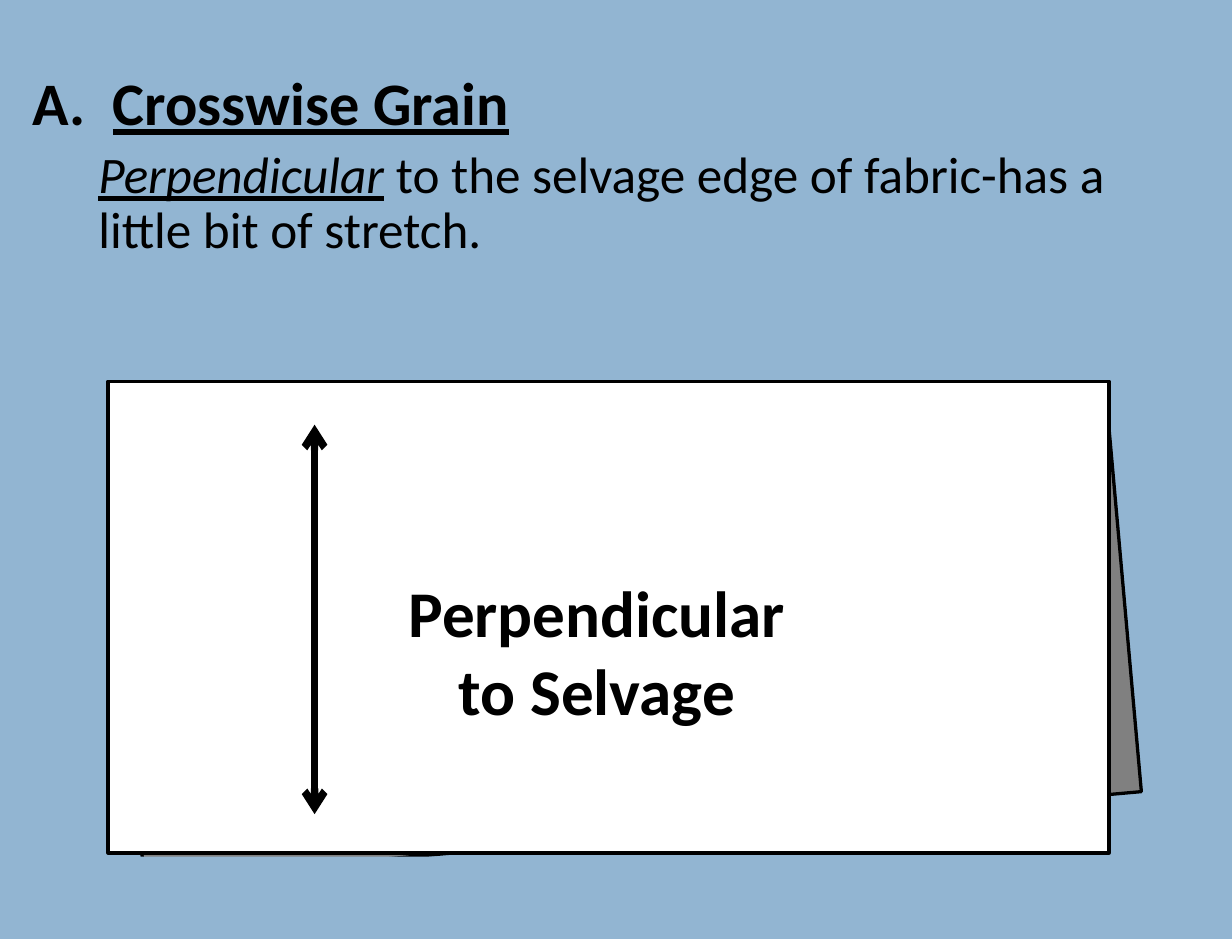
from lxml import etree
from pptx import Presentation
from pptx.dml.color import RGBColor
from pptx.enum import shapes as es, text as et
from pptx.oxml.ns import qn
from pptx.util import Cm, Pt

SKY, GREY, WHITE, BLACK = "92B5D2", "808080", "FFFFFF", "000000"


def paint(color, hue):
    color.rgb = RGBColor.from_string(hue)


def add_rect(slide, x, y, w, h, fill, edge=None, turn=0):
    rect = slide.shapes.add_shape(es.MSO_SHAPE.RECTANGLE, Cm(x), Cm(y), Cm(w), Cm(h))
    rect.shadow.inherit = False
    rect.rotation = turn
    rect.fill.solid()
    paint(rect.fill.fore_color, fill)
    if edge:
        paint(rect.line.color, edge)
        rect.line.width = Pt(2)
    else:
        rect.line.fill.background()


def add_frame(slide, x, y, w, h):
    frame = slide.shapes.add_textbox(Cm(x), Cm(y), Cm(w), Cm(h)).text_frame
    frame.word_wrap = True
    return frame


def add_run(para, words, size, bold=False, italic=False, under=False):
    run = para.add_run()
    run.text = words
    font = run.font
    font.name, font.size = "Calibri", Pt(size)
    font.bold, font.italic, font.underline = bold, italic, under
    paint(font.color, BLACK)


def add_arrow(slide, x, top, end):
    """Vertical line with an open arrowhead at both ends."""
    line = slide.shapes.add_connector(
        es.MSO_CONNECTOR.STRAIGHT, Cm(x), Cm(top), Cm(x), Cm(end))
    line.line.width = Pt(4.5)
    paint(line.line.color, BLACK)
    for tag in ("a:headEnd", "a:tailEnd"):
        etree.SubElement(line.line._get_or_add_ln(), qn(tag), type="arrow")
    etree.SubElement(line._element.spPr, qn("a:effectLst"))


def add_notes(slide, x, y, w, h):
    """Heading and its definition, on a shared hanging indent."""
    frame = add_frame(slide, x, y, w, h)
    frame.margin_left = frame.margin_right = Cm(0.28)
    head, body = frame.paragraphs[0], frame.add_paragraph()
    for para, size, first in ((head, 37, -1.42), (body, 31.4, 0)):
        para.line_spacing = 0.9
        para.space_before = Pt(size * 0.2)
        props = para._p.get_or_add_pPr()
        props.set("marL", str(Cm(1.42)))
        props.set("indent", str(Cm(first)))
    add_run(head, "A.  ", 37, bold=True)
    add_run(head, "Crosswise Grain", 37, bold=True, under=True)
    add_run(body, "Perpendicular", 31.4, italic=True, under=True)
    add_run(body, " to the selvage edge of fabric-has a little bit of stretch.", 31.4)


def add_fabric(slide, x, y, w, h):
    """White cloth over a tilted grey underside, with its grain arrow."""
    add_rect(slide, x + 0.35, y + 1.02, w, 8.84, GREY, BLACK, turn=354.9)
    add_rect(slide, x, y, w, h, WHITE, BLACK)
    add_rect(slide, x + 0.56, y + h + 0.08, 9.55, 1.75, SKY)
    label = add_frame(slide, x + 5.59, y + 4.01, 9.98, 3.68)
    label.auto_size = et.MSO_AUTO_SIZE.SHAPE_TO_FIT_TEXT
    para = label.paragraphs[0]
    para.alignment = et.PP_ALIGN.CENTER
    add_run(para, "Perpendicular to Selvage", 40, bold=True)
    add_arrow(slide, x + 4.47, y + 0.94, y + 9.37)


def main():
    deck = Presentation()
    deck.slide_width, deck.slide_height = Cm(26.67), Cm(20.32)
    slide = deck.slides.add_slide(deck.slide_layouts[6])
    slide.background.fill.solid()
    paint(slide.background.fill.fore_color, SKY)
    add_notes(slide, 0.43, 1.47, 25.83, 4.45)
    add_fabric(slide, 2.34, 8.25, 21.67, 10.21)
    deck.save("out.pptx")


if __name__ == "__main__":
    main()
